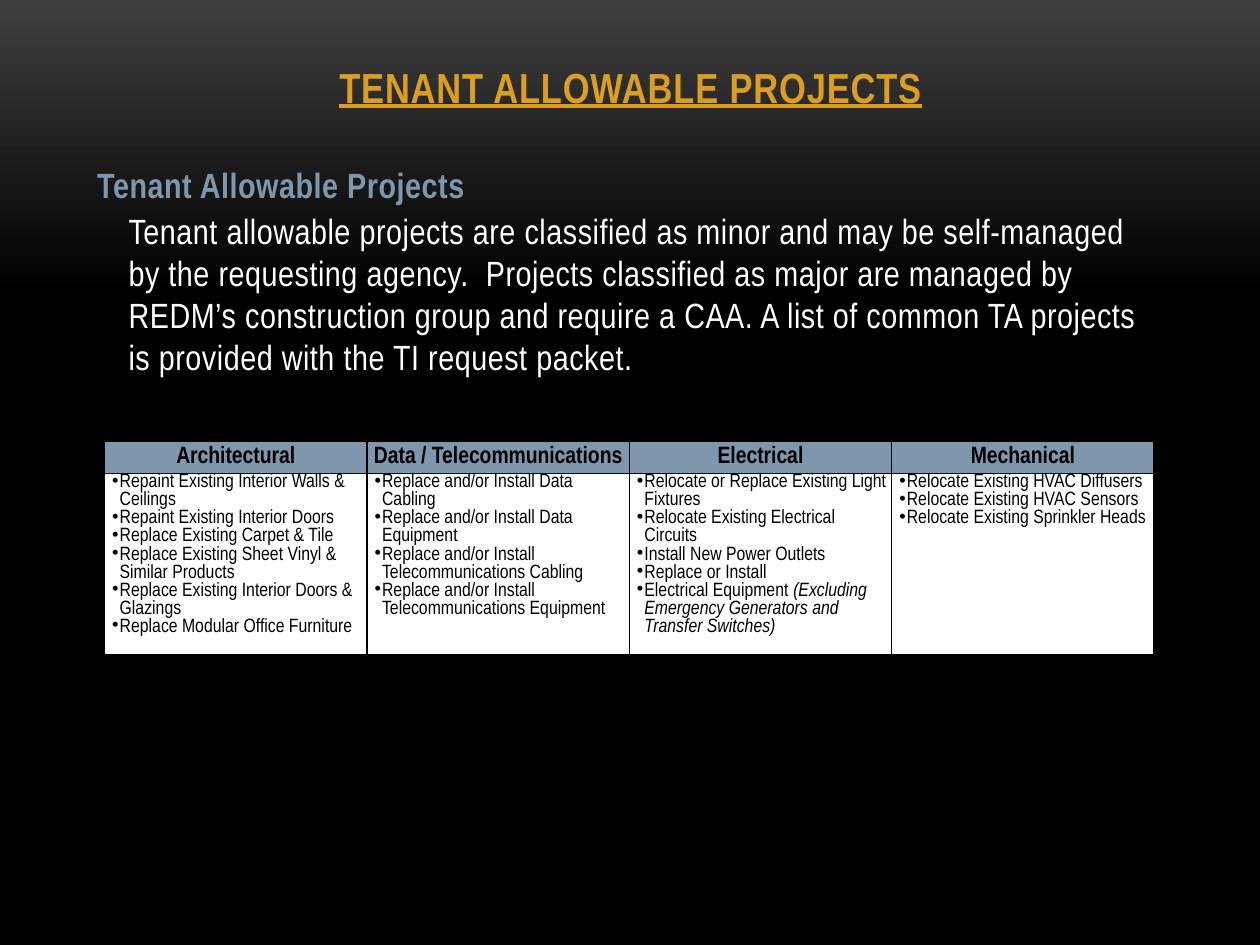
from lxml.etree import SubElement
from pptx import Presentation
from pptx.dml.color import RGBColor
from pptx.enum.text import MSO_ANCHOR, MSO_AUTO_SIZE, PP_ALIGN
from pptx.oxml.ns import qn
from pptx.util import Inches, Pt

GOLD = RGBColor(0xDC, 0x9E, 0x1F)
STEEL = RGBColor(0x7E, 0x97, 0xAD)
CHARCOAL = RGBColor(0x3F, 0x3F, 0x3F)
BLACK = RGBColor(0, 0, 0)
WHITE = RGBColor(0xFF, 0xFF, 0xFF)
FONT = "Arial Narrow"

HEADING = "Tenant Allowable Projects"
EXPLANATION = (
    "Tenant allowable projects are classified as minor and may be self-managed "
    "by the requesting agency.  Projects classified as major are managed by "
    "REDM’s construction group and require a CAA. A list of common TA projects "
    "is provided with the TI request packet."
)
PROJECTS = {
    "Architectural": [
        ["Repaint Existing Interior Walls & Ceilings"],
        ["Repaint Existing Interior Doors"],
        ["Replace Existing Carpet & Tile"],
        ["Replace Existing Sheet Vinyl & Similar Products"],
        ["Replace Existing Interior Doors & Glazings"],
        ["Replace Modular Office Furniture"],
    ],
    "Data / Telecommunications": [
        ["Replace and/or Install Data Cabling"],
        ["Replace and/or Install Data Equipment"],
        ["Replace and/or Install Telecommunications Cabling"],
        ["Replace and/or Install Telecommunications Equipment"],
    ],
    "Electrical": [
        ["Relocate or Replace Existing Light Fixtures"],
        ["Relocate Existing Electrical Circuits"],
        ["Install New Power Outlets"],
        ["Replace or Install"],
        ["Electrical Equipment ",
         "(Excluding Emergency Generators and Transfer Switches)"],
    ],
    "Mechanical": [
        ["Relocate Existing HVAC Diffusers"],
        ["Relocate Existing HVAC Sensors"],
        ["Relocate Existing Sprinkler Heads"],
    ],
}


def add_run(paragraph, text, size, color, bold=False, italic=False, spacing=0):
    run = paragraph.add_run()
    run.text = text
    run.font.name = FONT
    run.font.size = Pt(size)
    run.font.bold = bold
    run.font.italic = italic
    run.font.color.rgb = color
    if spacing:
        run.font._element.set("spc", str(round(spacing * 100)))
    return run


def set_indent(paragraph, left, first_line, bullet=None):
    properties = paragraph._p.get_or_add_pPr()
    properties.set("marL", str(Inches(left)))
    properties.set("indent", str(Inches(first_line)))
    if bullet:
        SubElement(properties, qn("a:buChar"), char=bullet)
    else:
        SubElement(properties, qn("a:buNone"))


def next_paragraph(frame, index):
    return frame.add_paragraph() if index else frame.paragraphs[0]


def place(placeholder, left, top, width, height):
    placeholder.left, placeholder.top = Inches(left), Inches(top)
    placeholder.width, placeholder.height = Inches(width), Inches(height)
    placeholder.text_frame.auto_size = MSO_AUTO_SIZE.NONE


def paint_background(slide):
    fill = slide.background.fill
    fill.gradient()
    fill.gradient_angle = 270
    for stop, color, position in zip(fill.gradient_stops, (CHARCOAL, BLACK), (0, 0.31)):
        stop.color.rgb = color
        stop.position = position


def fill_title(title):
    place(title, 0.67, 0.3, 8.67, 0.78)
    title.text_frame.vertical_anchor = MSO_ANCHOR.MIDDLE
    paragraph = title.text_frame.paragraphs[0]
    paragraph.alignment = PP_ALIGN.CENTER
    run = add_run(paragraph, "TENANT ALLOWABLE PROJECTS", 24, GOLD, bold=True, spacing=0.5)
    run.font.underline = True


def fill_body(body):
    place(body, 0.67, 1.25, 8.67, 5)
    parts = [(HEADING, 0, STEEL, True), (EXPLANATION, 0.25, WHITE, False)]
    for index, (text, left, color, bold) in enumerate(parts):
        paragraph = next_paragraph(body.text_frame, index)
        set_indent(paragraph, left, 0)
        paragraph.space_before = Pt(0)
        paragraph.space_after = Pt(2)
        add_run(paragraph, text, 20, color, bold=bold, spacing=0.3)


def format_cell(cell, color, anchor):
    cell.margin_left = cell.margin_right = cell.margin_top = cell.margin_bottom = 0
    cell.vertical_anchor = anchor
    properties = cell._tc.get_or_add_tcPr()
    for side in ("a:lnL", "a:lnR", "a:lnT", "a:lnB"):
        border = SubElement(properties, qn(side), w=str(Pt(1)))
        border_fill = SubElement(border, qn("a:solidFill"))
        SubElement(border_fill, qn("a:srgbClr"), val=str(BLACK))
    cell.fill.solid()
    cell.fill.fore_color.rgb = color


def fill_header(cell, category):
    format_cell(cell, STEEL, MSO_ANCHOR.MIDDLE)
    paragraph = cell.text_frame.paragraphs[0]
    paragraph.alignment = PP_ALIGN.CENTER
    add_run(paragraph, category, 13.5, BLACK, bold=True)


def fill_project_list(cell, projects):
    format_cell(cell, WHITE, MSO_ANCHOR.TOP)
    for index, project in enumerate(projects):
        paragraph = next_paragraph(cell.text_frame, index)
        set_indent(paragraph, 0.12, -0.06, "•")
        for part, text in enumerate(project):
            add_run(paragraph, text, 11, BLACK, italic=part > 0)


def add_project_table(slide):
    table = slide.shapes.add_table(
        2, len(PROJECTS), Inches(0.83), Inches(3.5), Inches(8.33), Inches(1.7)
    ).table
    table.first_row = table.horz_banding = False
    table.rows[0].height = Inches(0.26)
    table.rows[1].height = Inches(1.44)
    for column, (category, projects) in enumerate(PROJECTS.items()):
        fill_header(table.cell(0, column), category)
        fill_project_list(table.cell(1, column), projects)


def main():
    presentation = Presentation()
    presentation.slide_width = Inches(10)
    presentation.slide_height = Inches(7.5)
    slide = presentation.slides.add_slide(presentation.slide_layouts[1])
    paint_background(slide)
    fill_title(slide.shapes.title)
    fill_body(slide.placeholders[1])
    add_project_table(slide)
    presentation.save("out.pptx")


if __name__ == "__main__":
    main()
